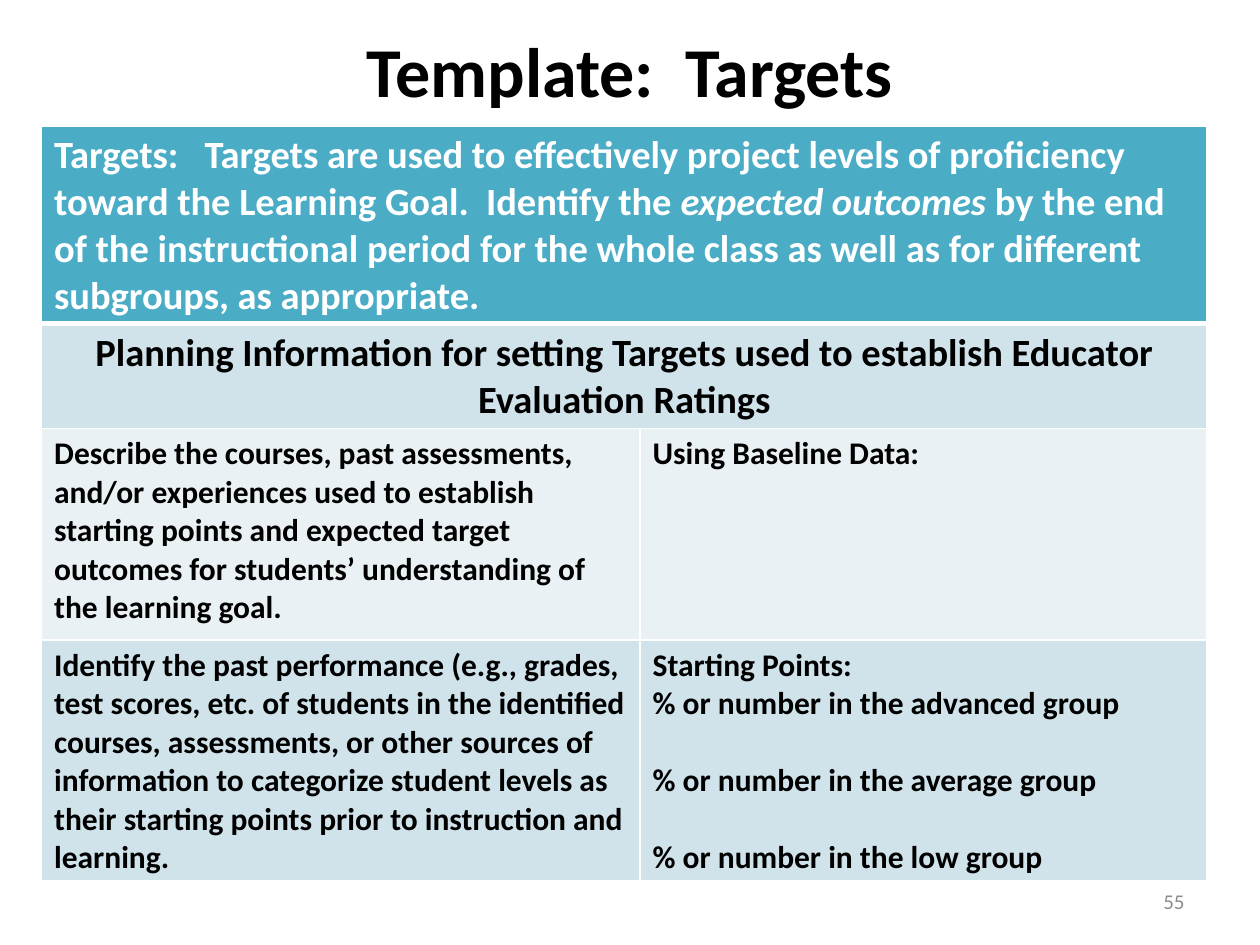
"""Build the Targets template slide with its planning table."""
from dataclasses import dataclass

from lxml.etree import SubElement
from pptx import Presentation
from pptx.dml.color import RGBColor
from pptx.enum.text import MSO_ANCHOR, PP_ALIGN
from pptx.oxml.ns import qn
from pptx.util import Inches, Pt


@dataclass(frozen=True)
class Theme:
    font: str = "Calibri"
    black: str = "000000"
    white: str = "FFFFFF"
    grey: str = "8C8C8C"
    teal: str = "4BACC6"
    band: str = "D0E3EA"
    pale: str = "E9F1F5"
    title: int = 40
    heading: int = 22
    body: int = 18
    number: int = 12


theme = Theme()


def add_span(para, text, size, color, bold=True, italic=False):
    span = para.add_run()
    span.text = text
    span.font.name = theme.font
    span.font.size = Pt(size)
    span.font.bold = bold
    span.font.italic = italic
    span.font.color.rgb = RGBColor.from_string(color)


def add_border(cell, side, width):
    line = SubElement(cell._tc.get_or_add_tcPr(), qn(f"a:{side}"), w=str(Pt(width)))
    fill = SubElement(line, qn("a:solidFill"))
    SubElement(fill, qn("a:srgbClr"), val=theme.white)


deck = Presentation()
deck.slide_width, deck.slide_height = Inches(10), Inches(7.5)
page = deck.slides.add_slide(deck.slide_layouts[6])

labels = [
    ("Template:  Targets", (0, 0.17, 10, 0.77), PP_ALIGN.CENTER, MSO_ANCHOR.TOP,
     theme.title, theme.black, True),
    ("55", (7.17, 6.95, 2.33, 0.4), PP_ALIGN.RIGHT, MSO_ANCHOR.MIDDLE,
     theme.number, theme.grey, False),
]
for text, place, align, anchor, size, color, bold in labels:
    box = page.shapes.add_textbox(*map(Inches, place))
    box.text_frame.word_wrap = True
    box.text_frame.vertical_anchor = anchor
    para = box.text_frame.paragraphs[0]
    para.alignment = align
    add_span(para, text, size, color, bold)

column_widths = [4.75, 4.5]
row_heights = [1.55, 0.83, 1.68, 1.9]
row_fills = [theme.teal, theme.band, theme.pale, theme.band]
table = page.shapes.add_table(
    len(row_heights), len(column_widths), Inches(0.33), Inches(1),
    Inches(sum(column_widths)), Inches(sum(row_heights))).table
for column, width in zip(table.columns, column_widths):
    column.width = Inches(width)

for index, (row, height, color) in enumerate(zip(table.rows, row_heights, row_fills)):
    row.height = Inches(height)
    for cell in row.cells:
        add_border(cell, "lnL", 1)
        add_border(cell, "lnR", 1)
        add_border(cell, "lnT", 3 if index == 1 else 1)
        add_border(cell, "lnB", 3 if index == 0 else 1)
        cell.fill.solid()
        cell.fill.fore_color.rgb = RGBColor.from_string(color)

for index in range(2):
    table.cell(index, 0).merge(table.cell(index, 1))

intro = table.cell(0, 0).text_frame.paragraphs[0]
for text, italic in [
    ("Targets:   Targets are used to effectively project levels of proficiency "
     "toward the Learning Goal.  Identify the ", False),
    ("expected outcomes ", True),
    ("by the end of the instructional period for the whole class as well as for "
     "different subgroups, as appropriate.", False),
]:
    add_span(intro, text, theme.heading, theme.white, italic=italic)

planning = table.cell(1, 0).text_frame.paragraphs[0]
planning.alignment = PP_ALIGN.CENTER
add_span(planning, "Planning Information for setting Targets used to establish "
         "Educator Evaluation Ratings", theme.heading, theme.black)

prompts = {
    (2, 0): "Describe the courses, past assessments, and/or experiences used to "
            "establish starting points and expected target outcomes for students’ "
            "understanding of the learning goal.",
    (2, 1): "Using Baseline Data:",
    (3, 0): "Identify the past performance (e.g., grades, test scores, etc. of "
            "students in the identified courses, assessments, or other sources of "
            "information to categorize student levels as their starting points "
            "prior to instruction and learning.",
    (3, 1): "Starting Points:",
}
for position, text in prompts.items():
    para = table.cell(*position).text_frame.paragraphs[0]
    add_span(para, text, theme.body, theme.black)

starting_points = table.cell(3, 1).text_frame
for group, gap in [("advanced", 0), ("average", 22), ("low", 22)]:
    para = starting_points.add_paragraph()
    para.space_before = Pt(gap)
    add_span(para, f"% or number in the {group} group", theme.body, theme.black)

deck.save("out.pptx")
